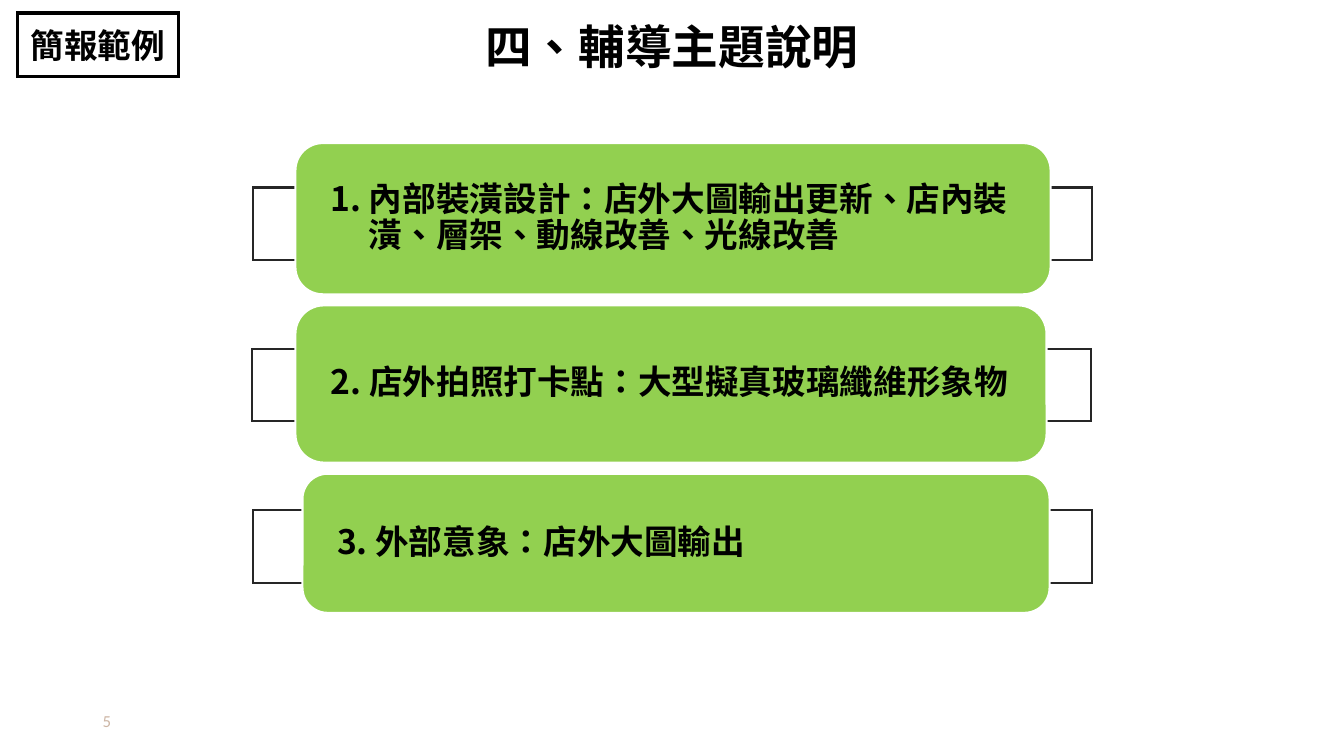
"""Build the slide that lists the three coaching topics."""
from dataclasses import dataclass

from pptx import Presentation
from pptx import util as u
from pptx.dml.color import RGBColor
from pptx.enum import shapes, text
from pptx.oxml import ns, xmlchemy

CJK_FONT = "Noto Sans CJK SC"
BLACK, WHITE, GREEN, CHARCOAL, TAN = "000000", "FFFFFF", "92D050", "262626", "CDB6A5"


@dataclass(frozen=True)
class Box:
    left: float
    top: float
    width: float
    height: float


@dataclass(frozen=True)
class Topic:
    bracket: Box
    panel: Box
    lines: tuple[str, ...]


TOPICS = (
    Topic(Box(2.51, 1.86, 8.32, 0.72), Box(2.93, 1.42, 7.49, 1.5),
          ("1. 內部裝潢設計：店外大圖輸出更新、店內裝", "潢、層架、動線改善、光線改善")),
    Topic(Box(2.5, 3.46, 8.32, 0.72), Box(2.93, 3.03, 7.45, 1.56),
          ("2. 店外拍照打卡點：大型擬真玻璃纖維形象物",)),
    Topic(Box(2.51, 5.06, 8.32, 0.72), Box(3, 4.7, 7.41, 1.38),
          ("3. 外部意象：店外大圖輸出",)),
)


def color(value: str) -> RGBColor:
    return RGBColor.from_string(value)


def place(box: Box) -> tuple:
    return tuple(u.Inches(n) for n in (box.left, box.top, box.width, box.height))


def add_box(slide, box: Box, kind, fill: str | None, line: str, line_width: float):
    shape = slide.shapes.add_shape(kind, *place(box))
    shape.shadow.inherit = False
    if fill:
        shape.fill.solid()
        shape.fill.fore_color.rgb = color(fill)
    else:
        shape.fill.background()
    shape.line.color.rgb = color(line)
    shape.line.width = u.Pt(line_width)
    miter = xmlchemy.OxmlElement("a:miter")
    miter.set("lim", "800000")
    shape._element.spPr.find(ns.qn("a:ln")).append(miter)
    return shape


def write(shape, lines: tuple[str, ...], size: float, align, font: str = CJK_FONT,
          ink: str = BLACK, bold: bool = True):
    frame = shape.text_frame
    frame.word_wrap = True
    frame.vertical_anchor = text.MSO_ANCHOR.MIDDLE
    paragraph = frame.paragraphs[0]
    paragraph.alignment = align
    for index, line in enumerate(lines):
        if index:
            paragraph.add_line_break()
        run = paragraph.add_run()
        run.text = line
        run.font.size = u.Pt(size)
        run.font.bold = bold
        run.font.color.rgb = color(ink)
        run.font.name = font
        properties = run._r.get_or_add_rPr()
        properties.set("lang", "zh-TW")
        east_asian = xmlchemy.OxmlElement("a:ea")
        east_asian.set("typeface", font)
        properties.find(ns.qn("a:latin")).addnext(east_asian)
    return paragraph


def add_topic(slide, topic: Topic) -> None:
    bracket = add_box(slide, topic.bracket, shapes.MSO_SHAPE.RECTANGLE, WHITE, CHARCOAL, 1.5)
    alpha = xmlchemy.OxmlElement("a:alpha")
    alpha.set("val", "90000")
    bracket._element.spPr.find(ns.qn("a:solidFill"))[0].append(alpha)

    panel = add_box(slide, topic.panel, shapes.MSO_SHAPE.ROUNDED_RECTANGLE, GREEN, WHITE, 1.5)
    panel.adjustments[0] = 0.18
    frame = panel.text_frame
    frame.margin_left = u.Inches(0.2)
    frame.margin_right = u.Inches(0.15)
    frame.margin_top = frame.margin_bottom = u.Inches(0.07)
    paragraph = write(panel, topic.lines, 24, text.PP_ALIGN.LEFT)
    paragraph.line_spacing = 0.9
    paragraph.space_after = u.Pt(8.4)
    properties = paragraph._p.get_or_add_pPr()
    properties.set("marL", str(u.Inches(0.45)))
    properties.set("indent", str(u.Inches(-0.38)))


def main() -> None:
    presentation = Presentation()
    presentation.slide_width = u.Inches(13.33)
    presentation.slide_height = u.Inches(7.5)
    slide = presentation.slides.add_slide(presentation.slide_layouts[6])

    label = add_box(slide, Box(0.17, 0.13, 1.6, 0.63), shapes.MSO_SHAPE.RECTANGLE,
                    None, BLACK, 2.25)
    write(label, ("簡報範例",), 24, text.PP_ALIGN.CENTER)

    title = slide.shapes.add_textbox(*place(Box(1.65, 0.17, 10.03, 0.64)))
    write(title, ("四、輔導主題說明",), 33.3, text.PP_ALIGN.CENTER).line_spacing = 0.9

    number = slide.shapes.add_textbox(*place(Box(0.92, 6.95, 3, 0.4)))
    write(number, ("5",), 12, text.PP_ALIGN.LEFT, "Calibri", TAN, False)

    for topic in TOPICS:
        add_topic(slide, topic)
    presentation.save("out.pptx")


if __name__ == "__main__":
    main()
